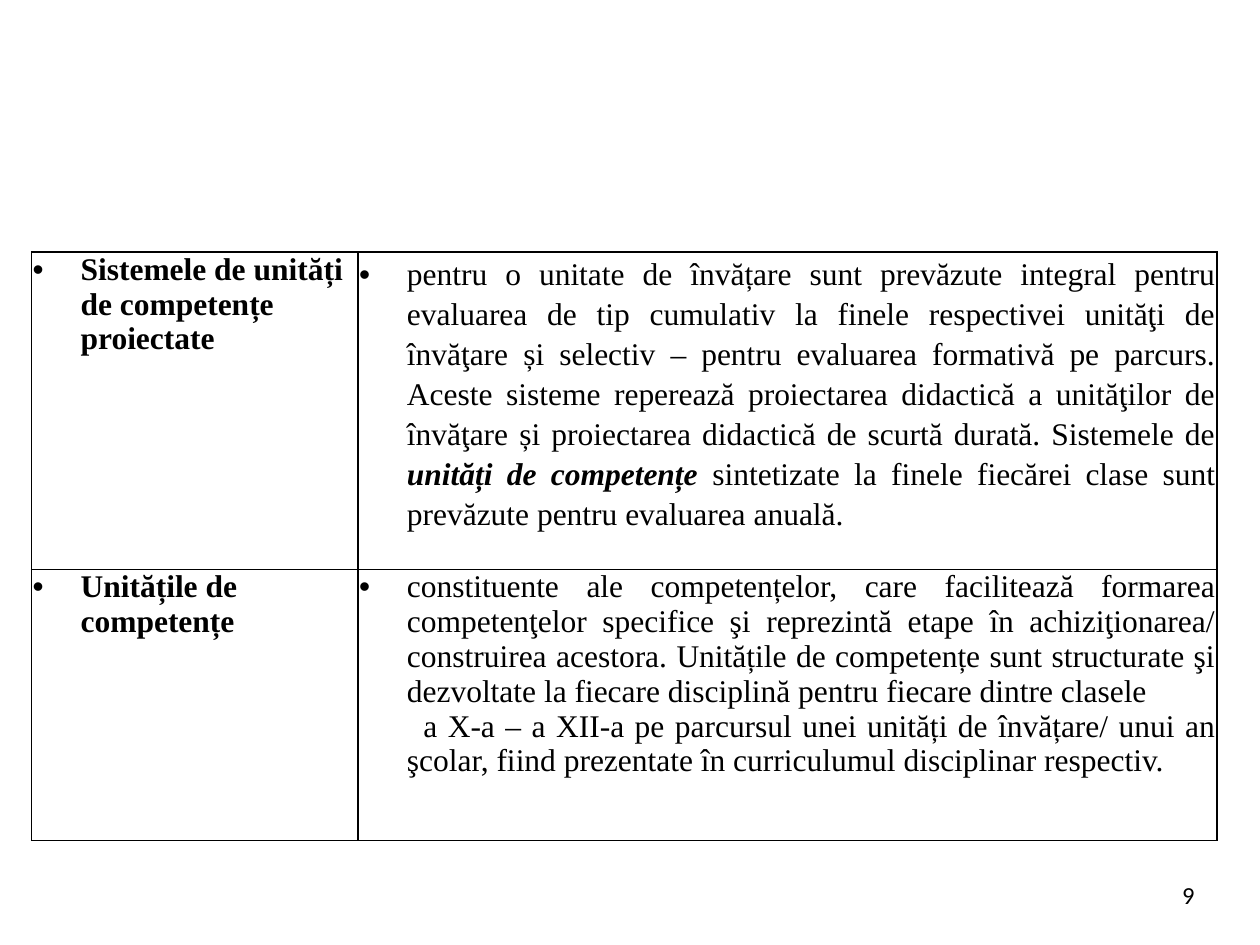
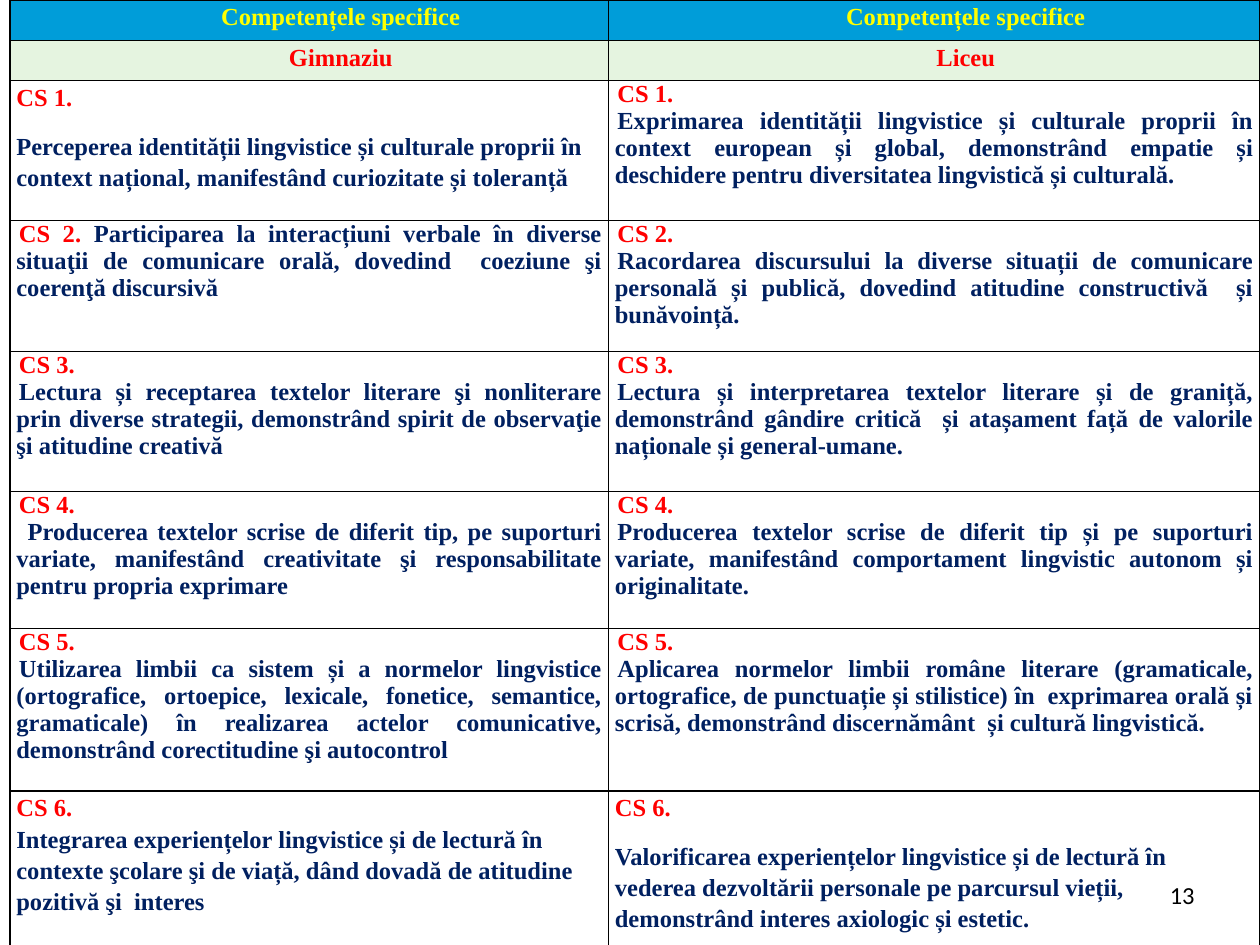
from dataclasses import dataclass
from typing import Optional

from lxml.etree import SubElement
from pptx import Presentation
from pptx.dml.color import RGBColor as RGB
from pptx.enum.text import MSO_ANCHOR as Anchor, PP_ALIGN as Align
from pptx.oxml import parse_xml
from pptx.oxml.ns import nsdecls, qn
from pptx.util import Inches, Pt


@dataclass(frozen=True)
class Theme:
    body_font: str = "Times New Roman"
    number_font: str = "Calibri"
    definition_size: int = 18
    competence_size: int = 14
    number_size: int = 14
    black: str = "000000"
    label: str = "FF0000"
    competence: str = "002060"
    heading: str = "FFFF00"
    heading_fill: str = "009DD9"
    level_fill: str = "E5F4E0"
    border_pt: float = 1


THEME = Theme()


@dataclass
class Run:
    text: str
    color: str = THEME.black
    bold: bool = True
    italic: bool = False


@dataclass
class Para:
    runs: list
    align: Align = Align.LEFT
    margin: float = 0
    first_line: float = 0
    spacing: float = 1
    after: float = 0
    bullet: bool = False


@dataclass
class Cell:
    paras: list
    fill: Optional[str] = None


# Shared building blocks
def style_font(font, run):
    font.bold, font.italic = run.bold, run.italic
    font.color.rgb = RGB.from_string(run.color)


def write_para(paragraph, para, size):
    paragraph.alignment = para.align
    paragraph.line_spacing = para.spacing
    paragraph.space_after = Pt(para.after)
    props = paragraph._p.get_or_add_pPr()
    props.set("marL", str(Inches(para.margin)))
    props.set("indent", str(Inches(para.first_line)))
    if para.bullet:
        SubElement(props, qn("a:buFont"), typeface="Arial")
        SubElement(props, qn("a:buChar"), char="•")
    else:
        SubElement(props, qn("a:buNone"))
    paragraph.font.name, paragraph.font.size = THEME.body_font, Pt(size)
    if len(para.runs) == 1:
        style_font(paragraph.font, para.runs[0])
    for run in para.runs:
        part = paragraph.add_run()
        part.text = run.text
        if len(para.runs) > 1:
            style_font(part.font, run)


def add_borders(cell):
    props = cell._tc.get_or_add_tcPr()
    for order, side in enumerate("LRTB"):
        props.insert(order, parse_xml(
            f'<a:ln{side} {nsdecls("a")} w="{Pt(THEME.border_pt)}"><a:solidFill>'
            f'<a:srgbClr val="{THEME.black}"/></a:solidFill></a:ln{side}>'))


def add_grid(slide, left, top, widths, heights, rows, size, side_inset):
    frame = slide.shapes.add_table(
        len(heights), len(widths), Inches(left), Inches(top),
        Inches(sum(widths)), Inches(sum(heights)))
    grid = frame.table
    grid.first_row = grid.horz_banding = False
    for column, width in zip(grid.columns, widths):
        column.width = Inches(width)
    for row, height, contents in zip(grid.rows, heights, rows):
        row.height = Inches(height)
        for cell, content in zip(row.cells, contents):
            cell.margin_left = cell.margin_right = Inches(side_inset)
            cell.margin_top = cell.margin_bottom = 0
            if content.fill:
                cell.fill.solid()
                cell.fill.fore_color.rgb = RGB.from_string(content.fill)
            else:
                cell.fill.background()
            add_borders(cell)
            for index, para in enumerate(content.paras):
                text = cell.text_frame
                write_para(text.add_paragraph() if index else text.paragraphs[0],
                           para, size)


def add_page_number(slide, number):
    box = slide.shapes.add_textbox(
        Inches(7.25), Inches(6.75), Inches(2.33), Inches(0.52))
    text = box.text_frame
    text.word_wrap = True
    text.vertical_anchor = Anchor.BOTTOM
    paragraph = text.paragraphs[0]
    paragraph.text = str(number)
    paragraph.alignment = Align.RIGHT
    paragraph.font.name = THEME.number_font
    paragraph.font.size = Pt(THEME.number_size)
    paragraph.font.color.rgb = RGB.from_string(THEME.black)


# Definitions slide: term on the left, explanation on the right
HANG = 0.38


def bulleted(*runs, align=Align.JUSTIFY, spacing=1):
    return Para(list(runs), align, HANG, -HANG, spacing, bullet=True)


def plain(text):
    return Run(text, bold=False)


def term(text):
    return Cell([bulleted(Run(text), align=Align.LEFT)])


def build_definitions(slide):
    systems = bulleted(
        plain("pentru o unitate de învățare sunt prevăzute integral pentru evaluarea de tip "
              "cumulativ la finele respectivei unităţi de învăţare și selectiv – pentru "
              "evaluarea formativă pe parcurs. Aceste sisteme reperează proiectarea didactică "
              "a unităţilor de învăţare și proiectarea didactică de scurtă durată. "
              "Sistemele de "),
        Run("unități de competențe", italic=True),
        plain(" sintetizate la finele fiecărei clase sunt prevăzute pentru evaluarea anuală."),
        spacing=1.15)
    units = bulleted(plain(
        "constituente ale competențelor, care facilitează formarea competenţelor specifice şi "
        "reprezintă etape în achiziţionarea/ construirea acestora. Unitățile de competențe "
        "sunt structurate şi dezvoltate la fiecare disciplină pentru fiecare dintre clasele"))
    grades = Para([plain(
        "a X-a – a XII-a pe parcursul unei unități de învățare/ unui an şcolar, fiind "
        "prezentate în curriculumul disciplinar respectiv.")], Align.JUSTIFY, HANG, 0.13)
    rows = [
        [term("Sistemele de unități de competențe proiectate"), Cell([systems])],
        [term("Unitățile de competențe"), Cell([units, grades])],
    ]
    add_grid(slide, 0.25, 2, [2.59, 6.82], [2.52, 2.15], rows,
             THEME.definition_size, 0.01)
    add_page_number(slide, 9)


# Comparison slide: specific competences of two school levels
def banner(text, color, fill):
    return Cell([Para([Run(text, color)], Align.CENTER, 0.5, spacing=1.15)], fill)


def tight(label, text, lead=0.02):
    return Cell([Para([Run(label, THEME.label)], Align.JUSTIFY, first_line=0.02),
                 Para([Run(text, THEME.competence)], Align.JUSTIFY, first_line=lead)])


def loose(label, text, after=10):
    return Cell([Para([Run(label, THEME.label)], spacing=1.15, after=after),
                 Para([Run(text, THEME.competence)], spacing=1.15)])


def inline(label, text):
    return Cell([Para([Run(label + " ", THEME.label), Run(text, THEME.competence)],
                      Align.JUSTIFY, first_line=0.02)])


def build_comparison(slide):
    rows = [
        [banner("Competențele specifice", THEME.heading, THEME.heading_fill)] * 2,
        [banner(level, THEME.label, THEME.level_fill) for level in ("Gimnaziu", "Liceu")],
        [loose("CS 1.", "Perceperea identității lingvistice și culturale proprii în context "
               "național, manifestând curiozitate și toleranță"),
         tight("CS 1.", "Exprimarea identității lingvistice și culturale proprii în context "
               "european și global, demonstrând empatie și deschidere pentru diversitatea "
               "lingvistică și culturală.")],
        [inline("CS 2.", "Participarea la interacțiuni verbale în diverse situaţii de "
                "comunicare orală, dovedind  coeziune şi coerenţă discursivă"),
         tight("CS 2.", "Racordarea discursului la diverse situații de comunicare personală "
               "și publică, dovedind atitudine constructivă  și bunăvoință.")],
        [tight("CS 3.", "Lectura și receptarea textelor literare şi nonliterare prin diverse "
               "strategii, demonstrând spirit de observaţie şi atitudine creativă"),
         tight("CS 3.", "Lectura și interpretarea textelor literare și de graniță, "
               "demonstrând gândire critică  și atașament față de valorile naționale și "
               "general-umane.")],
        [tight("CS 4.", "Producerea textelor scrise de diferit tip, pe suporturi variate, "
               "manifestând creativitate şi responsabilitate pentru propria exprimare",
               lead=0.09),
         tight("CS 4.", "Producerea textelor scrise de diferit tip și pe suporturi variate, "
               "manifestând comportament lingvistic autonom și originalitate.")],
        [tight("CS 5.", "Utilizarea limbii ca sistem și a normelor lingvistice (ortografice, "
               "ortoepice, lexicale, fonetice, semantice, gramaticale) în realizarea actelor "
               "comunicative, demonstrând corectitudine şi autocontrol"),
         tight("CS 5.", "Aplicarea normelor limbii române literare (gramaticale, "
               "ortografice, de punctuație și stilistice) în  exprimarea orală și scrisă, "
               "demonstrând discernământ  și cultură lingvistică.")],
        [loose("CS 6.", "Integrarea experiențelor lingvistice și de lectură în contexte "
               "şcolare şi de viață, dând dovadă de atitudine pozitivă şi  interes", after=0),
         loose("CS 6.", "Valorificarea experiențelor lingvistice și de lectură în vederea "
               "dezvoltării personale pe parcursul vieții, demonstrând interes axiologic și "
               "estetic.")],
    ]
    heights = [0.32, 0.32, 1.11, 1.04, 1.11, 1.09, 1.29, 1.63]
    add_grid(slide, 0.08, 0, [4.75, 5.17], heights, rows,
             THEME.competence_size, 0.05)
    add_page_number(slide, 13)


def main():
    deck = Presentation()
    deck.slide_width, deck.slide_height = Inches(10), Inches(7.5)
    blank = deck.slide_layouts[6]
    for build in (build_definitions, build_comparison):
        build(deck.slides.add_slide(blank))
    deck.save("out.pptx")


if __name__ == "__main__":
    main()
